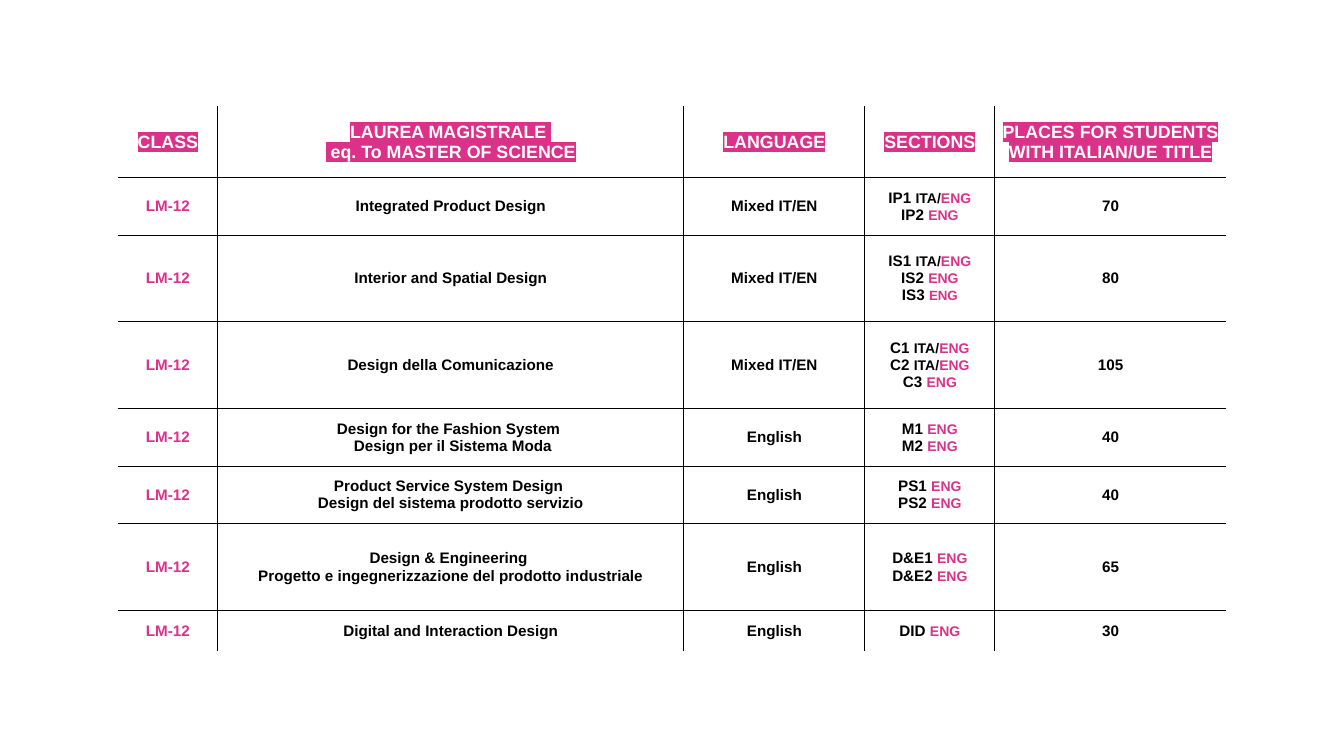
"""Build a slide with the table of master of science courses, sections and places."""
import dataclasses

import lxml.etree
import pptx
import pptx.dml.color
import pptx.enum.text
import pptx.oxml.ns
import pptx.util

Cm = pptx.util.Cm
Pt = pptx.util.Pt


@dataclasses.dataclass(frozen=True)
class Theme:
    font: str = "Arial"
    pink: str = "DC3189"
    black: str = "000000"
    white: str = "FFFFFF"
    header_size: float = 14
    body_size: float = 12
    tongue_size: float = 11
    small_tongue_size: float = 10.5
    rule_width: float = 1


THEME = Theme()
COLUMN_WIDTHS = (2.77, 12.95, 5.03, 3.61, 6.43)
ROW_HEIGHTS = (1.98, 1.6, 2.41, 2.41, 1.6, 1.6, 2.41, 1.12)
HEADERS = (
    ["CLASS"],
    ["LAUREA MAGISTRALE ", " eq. To MASTER OF SCIENCE"],
    ["LANGUAGE"],
    ["SECTIONS"],
    ["PLACES FOR STUDENTS", "WITH ITALIAN/UE TITLE"],
)
COURSE_CLASS = "LM-12"
SMALL_SECTION = "IS3"
COURSES = (
    (["Integrated Product Design"], "Mixed IT/EN", ["IP1 ITA/ENG", "IP2 ENG"], "70"),
    (["Interior and Spatial Design"], "Mixed IT/EN", ["IS1 ITA/ENG", "IS2 ENG", "IS3 ENG"], "80"),
    (["Design della Comunicazione"], "Mixed IT/EN", ["C1 ITA/ENG", "C2 ITA/ENG", "C3 ENG"], "105"),
    (["Design for the Fashion System ", " Design per il Sistema Moda"],
     "English", ["M1 ENG", "M2 ENG"], "40"),
    (["Product Service System Design ", "Design del sistema prodotto servizio"],
     "English", ["PS1 ENG", "PS2 ENG"], "40"),
    (["Design & Engineering ", "Progetto e ingegnerizzazione del prodotto industriale"],
     "English", ["D&E1 ENG", "D&E2 ENG"], "65"),
    (["Digital and Interaction Design"], "English", ["DID ENG"], "30"),
)


def add_element(parent, tag, **attributes):
    return lxml.etree.SubElement(parent, pptx.oxml.ns.qn(tag), **attributes)


def add_span(para, text, *, size=THEME.body_size, color=THEME.black, highlight=None):
    span = para.add_run()
    span.text = text
    span.font.size = Pt(size)
    span.font.bold = True
    span.font.color.rgb = pptx.dml.color.RGBColor.from_string(color)
    if highlight:
        mark = add_element(span.font._element, "a:highlight")
        add_element(mark, "a:srgbClr", val=highlight)
    span.font.name = THEME.font


def add_lines(cell, lines, **style):
    for para, line in zip(centred_paras(cell, len(lines)), lines):
        add_span(para, line, **style)


def add_sections(cell, sections):
    for para, section in zip(centred_paras(cell, len(sections)), sections):
        code, tongues = section.split(" ")
        size = THEME.small_tongue_size if code == SMALL_SECTION else THEME.tongue_size
        add_span(para, code + " ")
        if tongues.startswith("ITA/"):
            add_span(para, "ITA/", size=size)
        add_span(para, "ENG", size=size, color=THEME.pink)


def centred_paras(cell, count):
    frame = cell.text_frame
    paras = [frame.paragraphs[0]] + [frame.add_paragraph() for _ in range(count - 1)]
    for para in paras:
        para.alignment = pptx.enum.text.PP_ALIGN.CENTER
    return paras


def add_border(cell, tag, visible):
    line = add_element(cell._tc.get_or_add_tcPr(), tag, w=str(Pt(THEME.rule_width)))
    if visible:
        fill = add_element(line, "a:solidFill")
        add_element(fill, "a:srgbClr", val=THEME.black)
    else:
        add_element(line, "a:noFill")


def format_cell(cell, row, column):
    cell.vertical_anchor = pptx.enum.text.MSO_ANCHOR.MIDDLE
    cell.margin_left = cell.margin_right = Cm(0.13)
    cell.margin_top = cell.margin_bottom = Cm(0)
    add_border(cell, "a:lnL", column > 0)
    add_border(cell, "a:lnR", column < len(COLUMN_WIDTHS) - 1)
    add_border(cell, "a:lnT", row > 0)
    add_border(cell, "a:lnB", row < len(ROW_HEIGHTS) - 1)
    cell.fill.solid()
    cell.fill.fore_color.rgb = pptx.dml.color.RGBColor.from_string(THEME.white)


def add_grid(slide):
    table = slide.shapes.add_table(
        len(ROW_HEIGHTS), len(COLUMN_WIDTHS), Cm(3.28), Cm(2.95),
        Cm(sum(COLUMN_WIDTHS)), Cm(sum(ROW_HEIGHTS))).table
    table.first_row = table.horz_banding = False
    for column, width in zip(table.columns, COLUMN_WIDTHS):
        column.width = Cm(width)
    for row, height in zip(table.rows, ROW_HEIGHTS):
        row.height = Cm(height)
    for row in range(len(ROW_HEIGHTS)):
        for column in range(len(COLUMN_WIDTHS)):
            format_cell(table.cell(row, column), row, column)
    return table


def main():
    deck = pptx.Presentation()
    deck.slide_width, deck.slide_height = Cm(37.34), Cm(21)
    slide = deck.slides.add_slide(deck.slide_layouts[6])
    table = add_grid(slide)
    for column, lines in enumerate(HEADERS):
        add_lines(table.cell(0, column), lines, size=THEME.header_size,
                  color=THEME.white, highlight=THEME.pink)
    for row, (names, language, sections, places) in enumerate(COURSES, start=1):
        add_lines(table.cell(row, 0), [COURSE_CLASS], color=THEME.pink)
        add_lines(table.cell(row, 1), names)
        add_lines(table.cell(row, 2), [language])
        add_sections(table.cell(row, 3), sections)
        add_lines(table.cell(row, 4), [places])
    deck.save("out.pptx")


if __name__ == "__main__":
    main()
